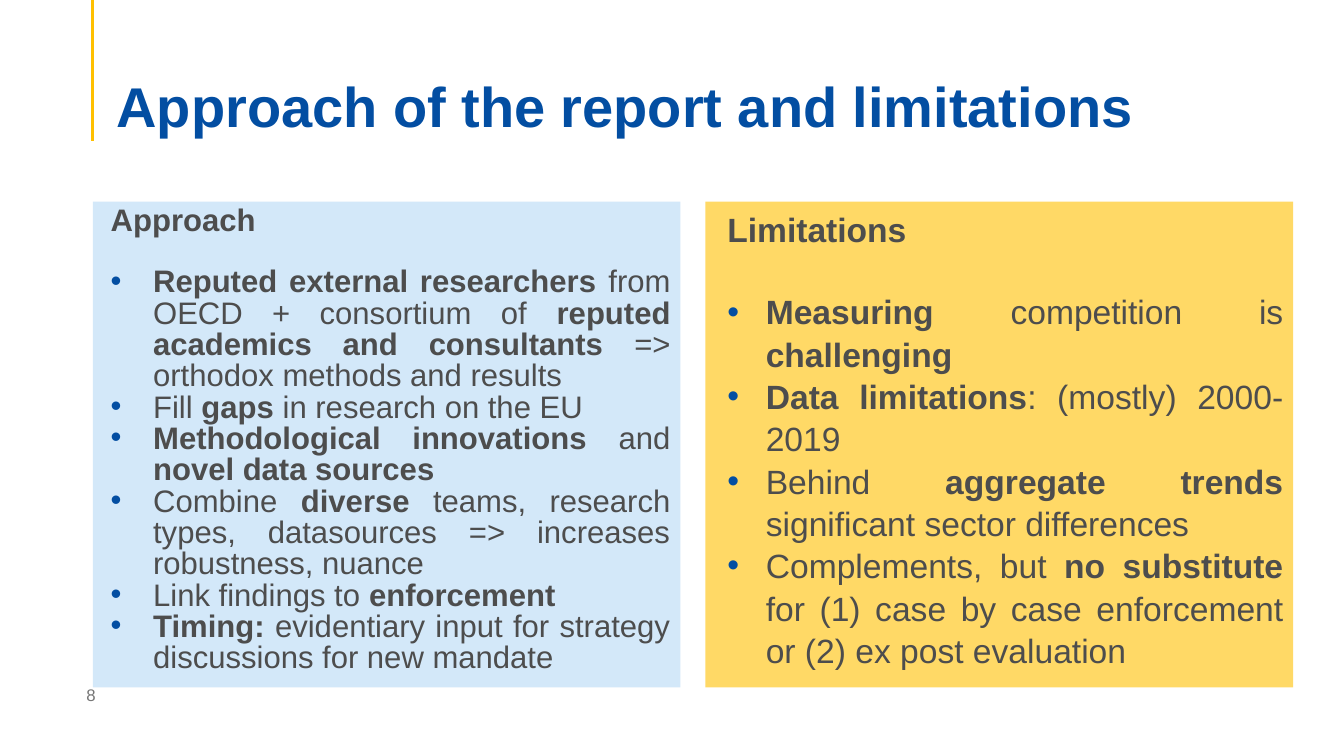
from dataclasses import dataclass

from lxml.etree import SubElement
from pptx import Presentation
from pptx.dml.color import RGBColor
from pptx.enum.shapes import MSO_CONNECTOR, MSO_SHAPE
from pptx.enum.text import MSO_ANCHOR, PP_ALIGN
from pptx.oxml.ns import qn
from pptx.util import Cm, Pt


@dataclass(frozen=True)
class Theme:
    font: str = "Arial"
    blue: str = "034EA2"
    gold: str = "FFC000"
    text: str = "4D4D4D"
    muted: str = "767676"
    approach_fill: str = "D3E8F9"
    limitations_fill: str = "FFD966"
    title_size: float = 40
    approach_size: float = 22.2
    limitations_size: float = 24
    number_size: float = 12


THEME = Theme()

APPROACH = [
    "**Reputed external researchers **from OECD + consortium of "
    "**reputed academics and consultants** => orthodox methods and results",
    "Fill **gaps** in research on the EU",
    "**Methodological innovations** and **novel data sources**",
    "Combine **diverse** teams, research types, datasources => increases robustness, nuance",
    "Link findings to **enforcement**",
    "**Timing:** evidentiary input for strategy discussions for new mandate",
]
LIMITATIONS = [
    "**Measuring** competition is **challenging**",
    "**Data limitations**: (mostly) 2000-2019",
    "Behind **aggregate trends **significant sector differences",
    "Complements, but **no substitute** for (1) case by case enforcement or (2) ex post evaluation",
]


def add_runs(paragraph, marked, size, color):
    """Add runs to the paragraph; text between ** marks is bold."""
    for index, words in enumerate(marked.split("**")):
        if words:
            run = paragraph.add_run()
            run.text = words
            run.font.name = THEME.font
            run.font.size = Pt(size)
            run.font.bold = index % 2 == 1
            run.font.color.rgb = RGBColor.from_string(color)


def set_indent(paragraph, left, hanging=0):
    properties = paragraph._p.get_or_add_pPr()
    properties.set("marL", str(Cm(left)))
    properties.set("indent", str(-Cm(hanging)))
    return properties


def add_bullet(paragraph, left, hanging):
    properties = set_indent(paragraph, left, hanging)
    bullet_color = SubElement(properties, qn("a:buClr"))
    SubElement(bullet_color, qn("a:srgbClr"), val=THEME.blue)
    SubElement(properties, qn("a:buFont"), typeface=THEME.font)
    SubElement(properties, qn("a:buChar"), char="•")


def add_label(slide, box, marked, size, color, anchor, bottom_inset=0.13):
    label = slide.shapes.add_textbox(*map(Cm, box))
    frame = label.text_frame
    frame.word_wrap = True
    frame.vertical_anchor = anchor
    frame.margin_bottom = Cm(bottom_inset)
    paragraph = frame.paragraphs[0]
    paragraph.line_spacing = 0.9
    add_runs(paragraph, marked, size, color)


def add_header(slide, box, title):
    """Place the vertical accent line at the left of the box and the title beside it."""
    left, top, width, height = box
    accent = slide.shapes.add_connector(
        MSO_CONNECTOR.STRAIGHT, Cm(left), Cm(top), Cm(left), Cm(top + height))
    accent.line.color.rgb = RGBColor.from_string(THEME.gold)
    accent.line.width = Pt(2.25)
    SubElement(accent._element.spPr, qn("a:effectLst"))
    title_box = (left + 0.35, top + 1.35, width - 0.35, height - 1.38)
    add_label(slide, title_box, f"**{title}**", THEME.title_size, THEME.blue,
              MSO_ANCHOR.BOTTOM, 0)


def add_panel(slide, box, heading, points, fill, size, spacing, gap,
              heading_indent, hanging):
    panel = slide.shapes.add_shape(MSO_SHAPE.RECTANGLE, *map(Cm, box))
    panel.shadow.inherit = False
    panel.fill.solid()
    panel.fill.fore_color.rgb = RGBColor.from_string(fill)
    panel.line.fill.background()
    frame = panel.text_frame
    frame.word_wrap = True
    frame.vertical_anchor = MSO_ANCHOR.TOP

    heading_line = frame.paragraphs[0]
    set_indent(heading_line, heading_indent)
    heading_line.alignment = PP_ALIGN.LEFT
    heading_line.line_spacing = spacing
    add_runs(heading_line, f"**{heading}**", size, THEME.text)

    for index, point in enumerate(points):
        paragraph = frame.add_paragraph()
        add_bullet(paragraph, 1.27, hanging)
        paragraph.alignment = PP_ALIGN.JUSTIFY
        paragraph.line_spacing = spacing
        paragraph.space_before = Pt(0 if index else gap)
        add_runs(paragraph, point, size, THEME.text)


def main():
    presentation = Presentation()
    presentation.slide_width = Cm(33.87)
    presentation.slide_height = Cm(19.05)
    slide = presentation.slides.add_slide(presentation.slide_layouts[6])

    margin, panel_top, panel_width, panel_height = 2.34, 5.08, 14.81, 12.24
    add_header(slide, (margin, 0, 29.56, 3.56), "Approach of the report and limitations")
    add_label(slide, (1.93, 17.04, 7.62, 1.02), "8", THEME.number_size, THEME.muted,
              MSO_ANCHOR.MIDDLE)
    add_panel(slide, (margin, panel_top, panel_width, panel_height),
              "Approach", APPROACH, THEME.approach_fill, THEME.approach_size,
              spacing=0.84, gap=21.3, heading_indent=0.2, hanging=1.07)
    add_panel(slide, (margin + panel_width + 0.63, panel_top, panel_width, panel_height),
              "Limitations", LIMITATIONS, THEME.limitations_fill, THEME.limitations_size,
              spacing=1.05, gap=28.9, heading_indent=0.3, hanging=0.97)
    presentation.save("out.pptx")


if __name__ == "__main__":
    main()
